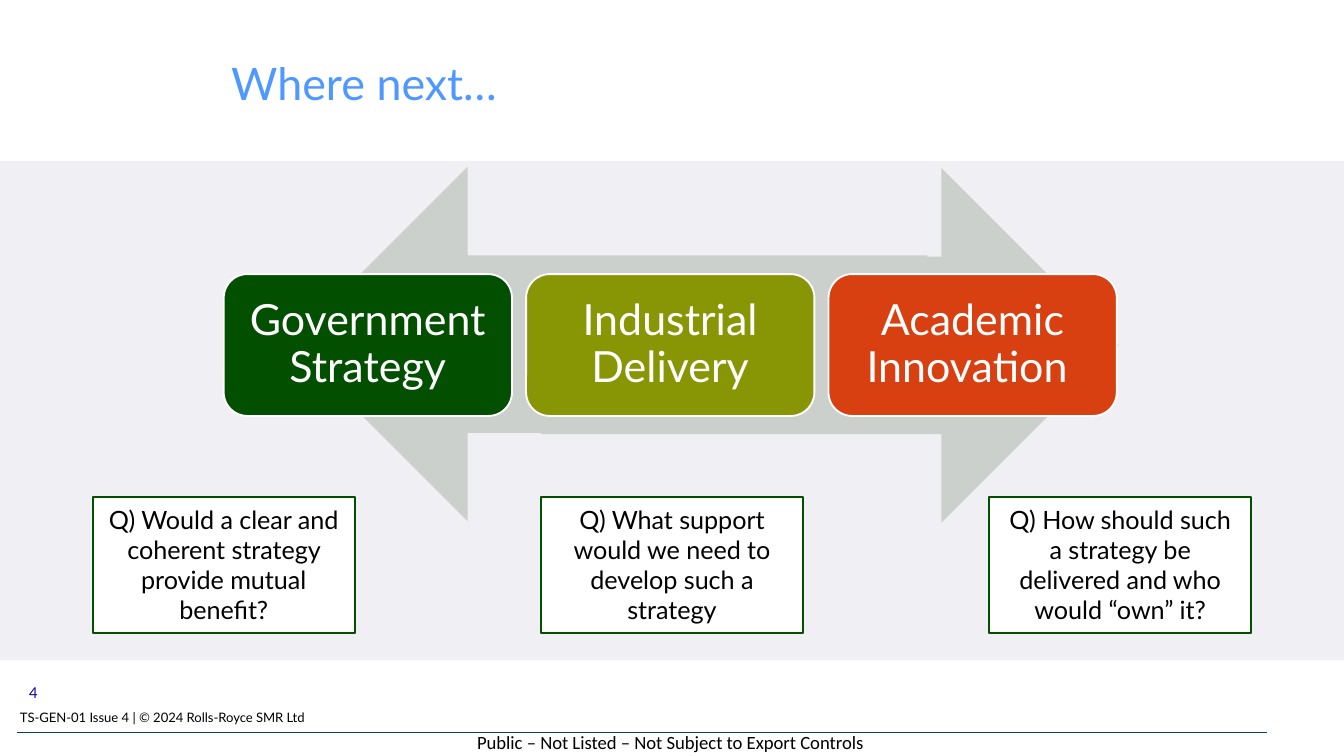
import dataclasses
import typing

import pptx
import pptx.dml.color
import pptx.enum.shapes
import pptx.enum.text
import pptx.oxml.ns
import pptx.util
from lxml import etree

SCALE = 4572  # EMU per px, 200 px to the inch

Kind = pptx.enum.shapes.MSO_SHAPE
Align = pptx.enum.text.PP_ALIGN
Anchor = pptx.enum.text.MSO_ANCHOR


@dataclasses.dataclass(frozen=True)
class Theme:
    font: str = "Lato"
    plain: str = "Calibri"
    title: str = "4F98FF"
    number: str = "10069F"
    ink: str = "000000"
    white: str = "FFFFFF"
    band: str = "EFEFF4"
    arrow: str = "CCD0CC"
    rule: str = "004A50"
    green: str = "034F00"
    olive: str = "889606"
    orange: str = "D83F11"
    head_size: float = 24
    pillar_size: float = 23
    ask_size: float = 13.5
    mark_size: float = 10
    page_size: float = 8
    note_size: float = 7


class Box(typing.NamedTuple):
    left: int
    top: int
    width: int
    height: int


@dataclasses.dataclass(frozen=True)
class Pillar:
    text: str
    fill: str
    ask: str


@dataclasses.dataclass(frozen=True)
class Note:
    text: str
    box: Box
    size: float
    color: str
    font: str
    align: Align = Align.LEFT
    inset: typing.Optional[int] = None
    wrap: bool = True


THEME = Theme()

PILLARS = [
    Pillar("Government Strategy", THEME.green,
           "Q) Would a clear and coherent strategy provide mutual benefit?"),
    Pillar("Industrial Delivery", THEME.olive,
           "Q) What support would we need to develop such a strategy"),
    Pillar("Academic Innovation ", THEME.orange,
           "Q) How should such a strategy be delivered and who would “own” it?"),
]

NOTES = [
    Note("4", Box(0, 1008, 76, 48), THEME.page_size, THEME.number,
         THEME.font, Align.RIGHT),
    Note("TS-GEN-01 Issue 4 | © 2024 Rolls-Royce SMR Ltd",
         Box(10, 1046, 488, 44), THEME.note_size, THEME.ink, THEME.font,
         wrap=False),
    Note("Public – Not Listed – Not Subject to Export Controls",
         Box(710, 1088, 586, 34), THEME.mark_size, THEME.ink, THEME.plain,
         inset=0),
]


def px(count: int) -> int:
    return pptx.util.Emu(count * SCALE)


def rgb(code: str) -> pptx.dml.color.RGBColor:
    return pptx.dml.color.RGBColor.from_string(code)


def place(box: Box) -> typing.List[int]:
    return [px(side) for side in box]


def write(shape, text: str, size: float, color: str, font: str = THEME.font,
          align: Align = Align.CENTER, anchor: Anchor = Anchor.TOP,
          inset: typing.Optional[int] = None, wrap: bool = True,
          space: typing.Optional[float] = None) -> None:
    frame = shape.text_frame
    frame.text = text
    frame.word_wrap = wrap
    frame.vertical_anchor = anchor
    if inset is not None:
        frame.margin_left = frame.margin_right = px(inset)
        frame.margin_top = frame.margin_bottom = px(inset)
    part = frame.paragraphs[0]
    part.alignment = align
    part.line_spacing = space
    for run in part.runs:
        run.font.name = font
        run.font.size = pptx.util.Pt(size)
        run.font.color.rgb = rgb(color)


def draw(slide, kind: Kind, box: Box, fill: str,
         line: typing.Optional[str] = None):
    shape = slide.shapes.add_shape(kind, *place(box))
    shape.shadow.inherit = False
    shape.fill.solid()
    shape.fill.fore_color.rgb = rgb(fill)
    if line:
        shape.line.color.rgb = rgb(line)
        shape.line.width = pptx.util.Pt(1)
    else:
        shape.line.fill.background()
    return shape


def add_note(slide, note: Note) -> None:
    shape = slide.shapes.add_textbox(*place(note.box))
    write(shape, note.text, note.size, note.color, note.font, note.align,
          inset=note.inset, wrap=note.wrap)


def add_rule(slide, left: int, right: int, top: int) -> None:
    rule = slide.shapes.add_connector(
        pptx.enum.shapes.MSO_CONNECTOR.STRAIGHT,
        px(left), px(top), px(right), px(top))
    rule.line.color.rgb = rgb(THEME.rule)
    rule.line.width = pptx.util.Pt(0.5)
    etree.SubElement(rule._element.spPr, pptx.oxml.ns.qn("a:effectLst"))


def main() -> None:
    deck = pptx.Presentation()
    deck.slide_width, deck.slide_height = px(2000), px(1125)
    slide = deck.slides.add_slide(deck.slide_layouts[5])

    # Title
    title = slide.shapes.title
    title.left, title.top, title.width, title.height = place(
        Box(324, 71, 1628, 114))
    write(title, "Where next…", THEME.head_size, THEME.title,
          align=Align.LEFT, anchor=Anchor.MIDDLE, space=0.9)

    # Footer and background band
    for note in NOTES:
        add_note(slide, note)
    draw(slide, Kind.RECTANGLE, Box(0, 240, 2000, 743), THEME.band)
    add_rule(slide, 26, 1886, 1090)

    # Two-way arrow
    back = draw(slide, Kind.RIGHT_ARROW, Box(432, 248, 948, 528), THEME.arrow)
    back.rotation = 180
    draw(slide, Kind.RIGHT_ARROW, Box(805, 250, 860, 528), THEME.arrow)

    # Pillars
    for step, pillar in enumerate(PILLARS):
        card = draw(slide, Kind.ROUNDED_RECTANGLE,
                    Box(333 + 450 * step, 408, 429, 211),
                    pillar.fill, THEME.white)
        write(card, pillar.text, THEME.pillar_size, THEME.white,
              anchor=Anchor.MIDDLE, inset=20, space=0.9)

    # Questions
    for step, pillar in enumerate(PILLARS):
        card = draw(slide, Kind.RECTANGLE,
                    Box(138 + 667 * step, 740, 390, 202),
                    THEME.white, THEME.green)
        write(card, pillar.ask, THEME.ask_size, THEME.ink)

    deck.save("out.pptx")


if __name__ == "__main__":
    main()
